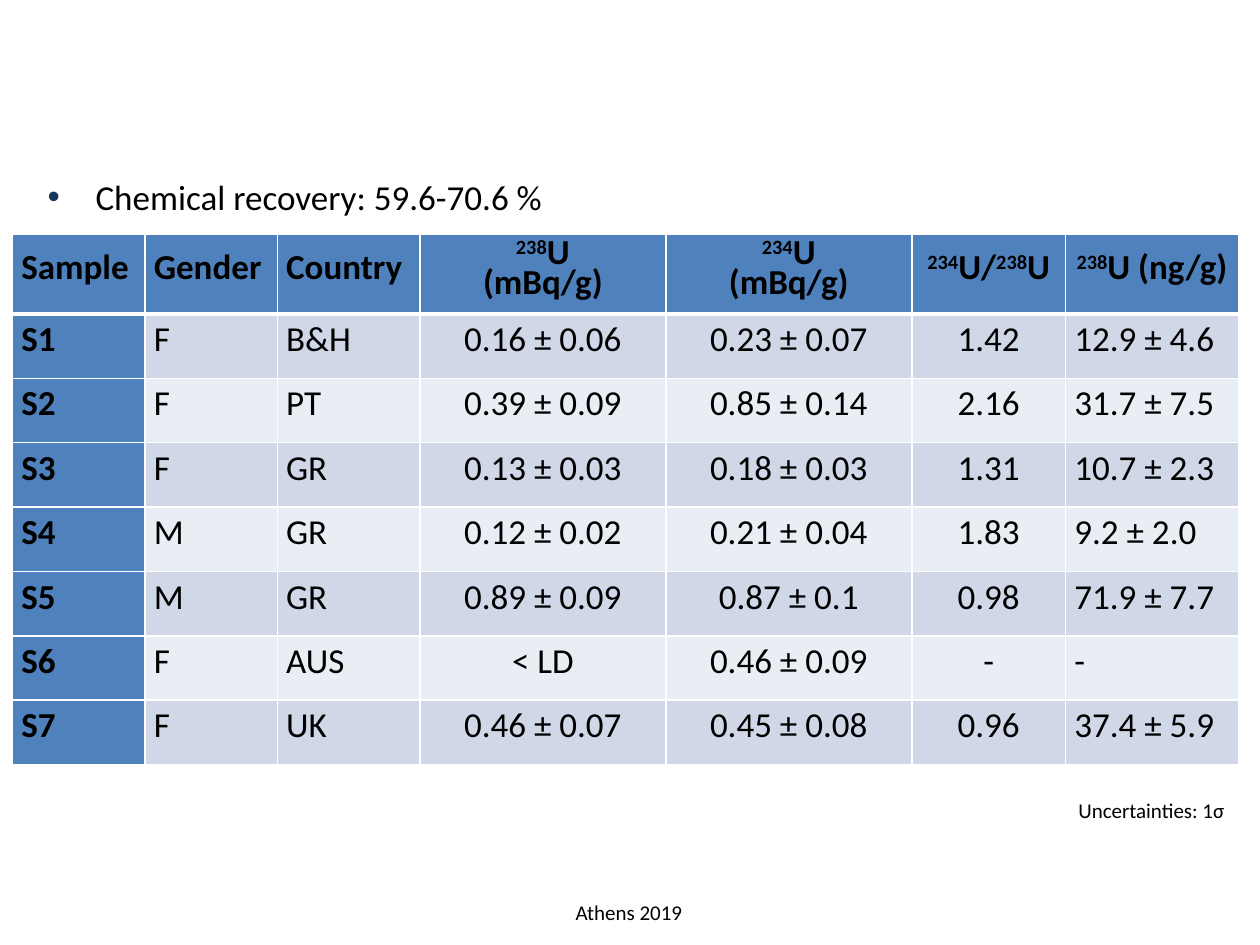
import dataclasses
import pptx
import pptx.dml.color
import pptx.enum.text
import pptx.oxml
import pptx.oxml.ns
import pptx.util

ALIGN = pptx.enum.text.PP_ALIGN
COLS, ROWS = 100, 75


@dataclasses.dataclass(frozen=True)
class Theme:
    font: str = "Calibri"
    body: int = 20
    small: int = 12
    lead: int = 17
    ink: str = "000000"
    head: str = "4F81BD"
    bands: tuple = ("D0D8E8", "E9EDF4")
    rule: str = "FFFFFF"
    dot: str = "17375E"
    thin: int = 1
    thick: int = 3


THEME = Theme()
WIDTHS = (1.05, 1.05, 1.13, 1.95, 1.95, 1.22, 1.37)
CENTRED = (3, 4, 5)
HEADS = ("Sample", "Gender", "Country", "^238^U\n(mBq/g)", "^234^U\n(mBq/g)",
         "^234^U/^238^U", "^238^U (ng/g)")
DATA = (
    ("S1", "F", "B&H", "0.16 ± 0.06", "0.23 ± 0.07", "1.42", "12.9 ± 4.6"),
    ("S2", "F", "PT", "0.39 ± 0.09", "0.85 ± 0.14", "2.16", "31.7 ± 7.5"),
    ("S3", "F", "GR", "0.13 ± 0.03", "0.18 ± 0.03", "1.31", "10.7 ± 2.3"),
    ("S4", "M", "GR", "0.12 ± 0.02", "0.21 ± 0.04", "1.83", "9.2 ± 2.0"),
    ("S5", "M", "GR", "0.89 ± 0.09", "0.87 ± 0.1", "0.98", "71.9 ± 7.7"),
    ("S6", "F", "AUS", "< LD", "0.46 ± 0.09", "-", "-"),
    ("S7", "F", "UK", "0.46 ± 0.07", "0.45 ± 0.08", "0.96", "37.4 ± 5.9"),
)


def rgb(code):
    return pptx.dml.color.RGBColor.from_string(code)


def make(xml):
    space = pptx.oxml.ns.nsdecls("a")
    return pptx.oxml.parse_xml(xml.replace(">", f" {space}>", 1)
                               if "/>" not in xml.split(">")[0] + ">"
                               else xml.replace("/>", f" {space}/>", 1))


def place(deck, box):
    x, y, w, h = box
    across, down = deck.slide_width / COLS, deck.slide_height / ROWS
    return [round(n) for n in (x * across, y * down, w * across, h * down)]


def style(para, size, bold=False):
    font = para.font
    font.name = THEME.font
    font.size = pptx.util.Pt(size)
    font.bold = bold
    font.color.rgb = rgb(THEME.ink)


def add_note(deck, slide, box, text, size, bullet=False):
    frame = slide.shapes.add_textbox(*place(deck, box)).text_frame
    frame.word_wrap = False
    frame.auto_size = pptx.enum.text.MSO_AUTO_SIZE.SHAPE_TO_FIT_TEXT
    para = frame.paragraphs[0]
    para.text = text
    if bullet:
        props = para._p.get_or_add_pPr()
        indent = pptx.util.Inches(0.38)
        props.set("marL", str(indent))
        props.set("indent", str(-indent))
        for xml in (f'<a:buClr><a:srgbClr val="{THEME.dot}"/></a:buClr>',
                    '<a:buFont typeface="Arial"/>', '<a:buChar char="•"/>'):
            props.append(make(xml))
    style(para, size)


def add_rules(cell, row):
    props = cell._tc.get_or_add_tcPr()
    for side in "LRTB":
        heavy = (row, side) in ((0, "B"), (1, "T"))
        width = pptx.util.Pt(THEME.thick if heavy else THEME.thin)
        props.append(make(
            f'<a:ln{side} w="{width}"><a:solidFill>'
            f'<a:srgbClr val="{THEME.rule}"/></a:solidFill></a:ln{side}>'))


def fill_cell(cell, text, row, col):
    lead = row == 0 or col == 0
    add_rules(cell, row)
    cell.fill.solid()
    cell.fill.fore_color.rgb = rgb(
        THEME.head if lead else THEME.bands[(row - 1) % 2])
    cell.vertical_anchor = pptx.enum.text.MSO_ANCHOR.MIDDLE
    cell.margin_left = cell.margin_right = pptx.util.Inches(0.07)
    cell.margin_top = cell.margin_bottom = 0
    frame = cell.text_frame
    for num, line in enumerate(text.split("\n")):
        para = frame.add_paragraph() if num else frame.paragraphs[0]
        mid = col in CENTRED or (row == 0 and col == len(HEADS) - 1)
        para.alignment = ALIGN.CENTER if mid else ALIGN.LEFT
        para.line_spacing = pptx.util.Pt(THEME.lead)
        style(para, THEME.body, lead)
        for part, piece in enumerate(line.split("^")):
            if piece:
                run = para.add_run()
                run.text = piece
                if part % 2:
                    run._r.get_or_add_rPr().set("baseline", "30000")


def add_grid(deck, slide, box):
    rows = (HEADS,) + DATA
    x, y, w, h = place(deck, box)
    table = slide.shapes.add_table(len(rows), len(HEADS), x, y, w, h).table
    for col, share in zip(table.columns, WIDTHS):
        col.width = round(w * share / sum(WIDTHS))
    top = round(h * 0.15)
    for num, (line, texts) in enumerate(zip(table.rows, rows)):
        line.height = round((h - top) / len(DATA)) if num else top
        for col, text in enumerate(texts):
            fill_cell(table.cell(num, col), text, num, col)


def main():
    deck = pptx.Presentation()
    deck.slide_width = pptx.util.Inches(10)
    deck.slide_height = pptx.util.Inches(7.5)
    slide = deck.slides.add_slide(deck.slide_layouts[6])
    add_note(deck, slide, (44.7, 70.9, 10.6, 3), "Athens 2019", THEME.small)
    add_grid(deck, slide, (1, 18.6, 97.3, 42.1))
    add_note(deck, slide, (2.8, 13.4, 41.5, 4.4),
             "Chemical recovery: 59.6-70.6 %", THEME.body, True)
    add_note(deck, slide, (84.6, 62.8, 13.8, 3), "Uncertainties: 1σ",
             THEME.small)
    deck.save("out.pptx")


if __name__ == "__main__":
    main()
